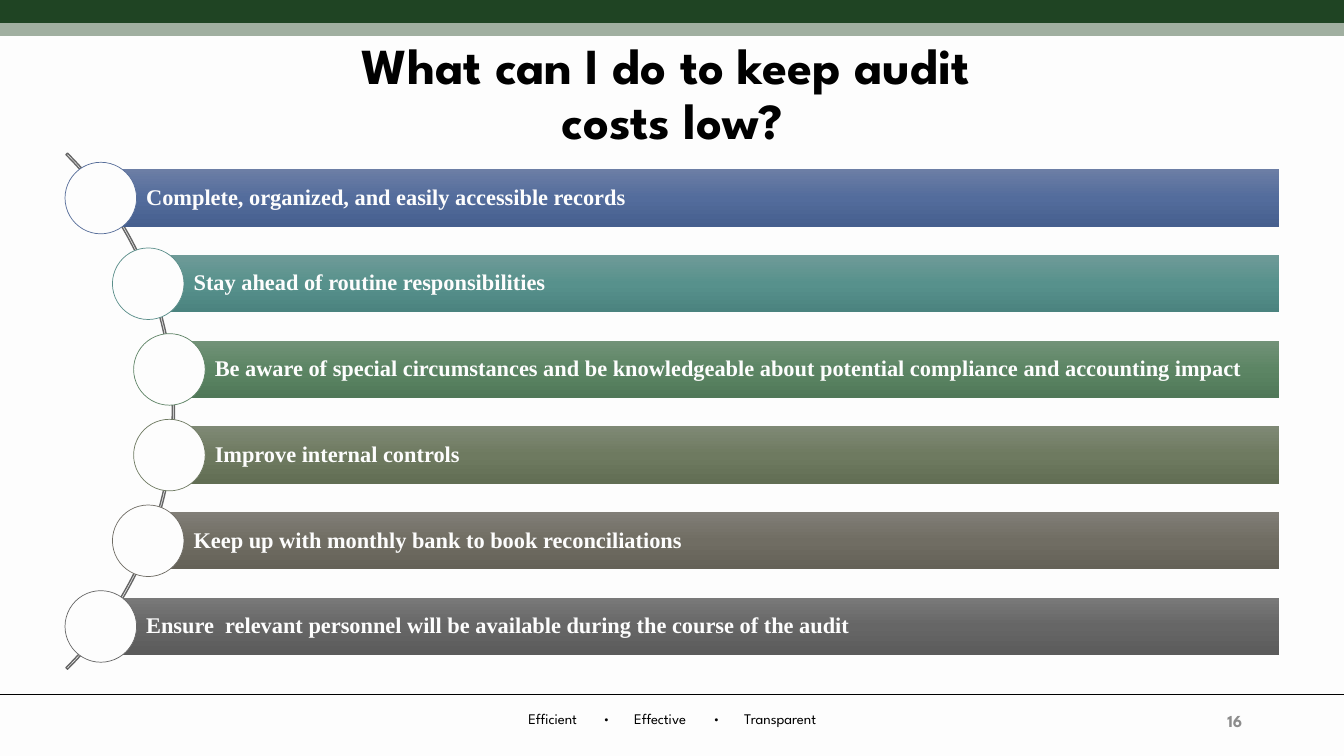
"""Build the slide on keeping audit costs low."""
from copy import deepcopy
from dataclasses import dataclass

from lxml import etree
from pptx import Presentation
from pptx import util as u
from pptx.dml.color import RGBColor
from pptx.enum import shapes, text
from pptx.oxml import ns

LEFT, CENTER, RIGHT, JUSTIFY = (
    text.PP_ALIGN.LEFT, text.PP_ALIGN.CENTER, text.PP_ALIGN.RIGHT, text.PP_ALIGN.JUSTIFY)

TITLE_LINES = ["What can I do to keep audit ", "costs low?"]
FOOTER_WORDS = ["Efficient", "•", "Effective", "•", "Transparent"]
FOOTER_STOPS = [0.74, 1.05, 1.83, 2.14]
PAGE_NUMBER = "16"
TIPS = [
    ("Complete, organized, and easily accessible records",
     1.0, LEFT, ("6C7EA5", "536C9C", "465F8E"), "566D99"),
    ("Stay ahead of routine responsibilities",
     1.47, LEFT, ("6F9B98", "57918C", "4B837F"), "5A8E8A"),
    ("Be aware of special circumstances and be knowledgeable about potential "
     "compliance and accounting impact",
     1.68, JUSTIFY, ("729278", "5C8564", "507858"), "5E8365"),
    ("Improve internal controls",
     1.68, LEFT, ("7F8975", "6E7A60", "626E54"), "6E7961"),
    ("Keep up with monthly bank to book reconciliations",
     1.47, JUSTIFY, ("817E77", "706D63", "646157"), "6F6C64"),
    ("Ensure  relevant personnel will be available during the course of the audit",
     1.0, JUSTIFY, ("797979", "666666", "5B5B5B"), "666666"),
]
RULES = [(0.1, "1F4423", 18), (0.29, "A0AFA0", 9), (6.89, "000000", 0.5)]
ARC_BOX = (-5.51, 0.46, 7.24, 7.24)
ARC_ANGLES = (189, 27, 0.003)
BAR_TOP, BAR_PITCH, BAR_HEIGHT, BAR_RIGHT = 1.68, 0.85, 0.57, 12.69
CIRCLE = 0.71


@dataclass(frozen=True)
class Theme:
    """Colours, fonts and type sizes."""
    paper: str = "FDFDFD"
    ink: str = "000000"
    muted: str = "8C8C8C"
    arc: str = "666666"
    heading_font: str = "League Spartan"
    body_font: str = "Times New Roman"
    title_size: float = 36
    tip_size: float = 16
    footer_size: float = 10.5
    number_size: float = 12


THEME = Theme()


def color(code):
    return RGBColor.from_string(code)


def inches(box):
    return [u.Inches(length) for length in box]


def add_run(paragraph, words, font, size, ink, bold=False):
    run = paragraph.add_run()
    run.text = words
    run.font.name, run.font.size, run.font.bold = font, u.Pt(size), bold
    run.font.color.rgb = color(ink)


def set_frame(shape, align, anchor=text.MSO_ANCHOR.MIDDLE, insets=(0.1, 0.05, 0.1, 0.05)):
    frame = shape.text_frame
    frame.word_wrap = True
    frame.vertical_anchor = anchor
    (frame.margin_left, frame.margin_top,
     frame.margin_right, frame.margin_bottom) = inches(insets)
    paragraph = frame.paragraphs[0]
    paragraph.alignment = align
    return paragraph


def add_outlined(slide, kind, box, line, width):
    shape = slide.shapes.add_shape(kind, *inches(box))
    shape.shadow.inherit = False
    shape.line.color.rgb = color(line)
    shape.line.width = u.Pt(width)
    return shape


def add_rule(slide, top, ink, width):
    rule = slide.shapes.add_connector(
        shapes.MSO_CONNECTOR.STRAIGHT, *inches((-0.01, top, 13.35, top)))
    rule.line.color.rgb = color(ink)
    rule.line.width = u.Pt(width)
    etree.SubElement(rule._element.spPr, ns.qn("a:effectLst"))


def fill_gradient(shape, codes):
    shape.fill.gradient()
    stop_list = shape._element.spPr.find(".//" + ns.qn("a:gsLst"))
    stop_list.append(deepcopy(stop_list[-1]))
    for index, (stop, code) in enumerate(zip(shape.fill.gradient_stops, codes)):
        stop.color.rgb = color(code)
        stop.position = index / 2
    shape.fill.gradient_angle = 270


def add_tip(slide, index, words, left, align, gradient, outline):
    top = BAR_TOP + index * BAR_PITCH
    bar = slide.shapes.add_shape(
        shapes.MSO_SHAPE.RECTANGLE, *inches((left, top, BAR_RIGHT - left, BAR_HEIGHT)))
    bar.shadow.inherit = False
    bar.line.fill.background()
    fill_gradient(bar, gradient)
    paragraph = set_frame(bar, align, insets=(0.45, 0.04, 0.04, 0.04))
    paragraph.line_spacing = 0.9
    add_run(paragraph, words, THEME.body_font, THEME.tip_size, THEME.paper, True)
    circle_top = top + (BAR_HEIGHT - CIRCLE) / 2
    circle = add_outlined(
        slide, shapes.MSO_SHAPE.OVAL,
        (left - CIRCLE / 2, circle_top, CIRCLE, CIRCLE), outline, 0.5)
    circle.fill.solid()
    circle.fill.fore_color.rgb = color(THEME.paper)


def add_title(slide):
    title = slide.shapes.add_textbox(*inches((0.92, 0.4, 11.5, 1.1)))
    paragraph = set_frame(title, CENTER)
    paragraph.line_spacing = 0.9
    for index, line in enumerate(TITLE_LINES):
        if index:
            paragraph.add_line_break()
        add_run(paragraph, line, THEME.heading_font, THEME.title_size, THEME.ink, True)


def add_footer(slide):
    footer = slide.shapes.add_textbox(*inches((-0.01, 6.99, 13.36, 0.28)))
    paragraph = set_frame(footer, LEFT, text.MSO_ANCHOR.TOP, (5.25, 0.05, 0.1, 0.05))
    add_run(paragraph, "\t".join(FOOTER_WORDS),
            THEME.heading_font, THEME.footer_size, THEME.ink)
    tabs = etree.SubElement(paragraph._p.get_or_add_pPr(), ns.qn("a:tabLst"))
    for stop in FOOTER_STOPS:
        etree.SubElement(tabs, ns.qn("a:tab"), pos=str(u.Inches(stop)), algn="l")
    number = slide.shapes.add_textbox(*inches((9.42, 6.95, 3, 0.4)))
    add_run(set_frame(number, RIGHT), PAGE_NUMBER,
            THEME.heading_font, THEME.number_size, THEME.muted, True)


def main():
    presentation = Presentation()
    presentation.slide_width, presentation.slide_height = inches((13.33, 7.5))
    slide = presentation.slides.add_slide(presentation.slide_layouts[6])
    slide.background.fill.solid()
    slide.background.fill.fore_color.rgb = color(THEME.paper)
    for rule in RULES:
        add_rule(slide, *rule)
    add_title(slide)
    arc = add_outlined(slide, shapes.MSO_SHAPE.BLOCK_ARC, ARC_BOX, THEME.arc, 1)
    arc.fill.background()
    for index, angle in enumerate(ARC_ANGLES):
        arc.adjustments[index] = angle
    for index, tip in enumerate(TIPS):
        add_tip(slide, index, *tip)
    add_footer(slide)
    presentation.save("out.pptx")


if __name__ == "__main__":
    main()
